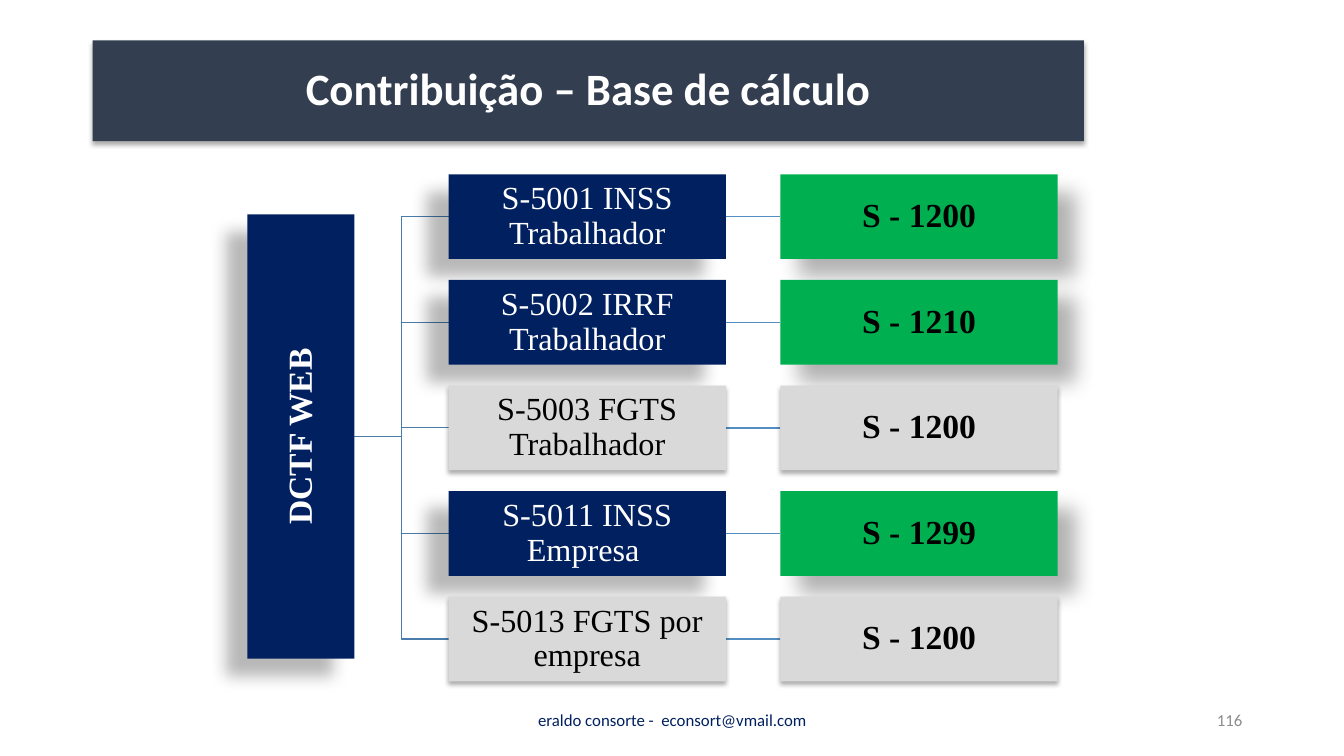
from lxml import etree
from pptx import Presentation
from pptx.dml.color import RGBColor
from pptx.enum.shapes import MSO_CONNECTOR, MSO_SHAPE
from pptx.enum.text import MSO_ANCHOR, PP_ALIGN
from pptx.oxml.ns import qn
from pptx.util import Inches, Pt

RECT = MSO_SHAPE.RECTANGLE
STRAIGHT, ELBOW = MSO_CONNECTOR.STRAIGHT, MSO_CONNECTOR.ELBOW
CENTER, RIGHT = PP_ALIGN.CENTER, PP_ALIGN.RIGHT
MIDDLE = MSO_ANCHOR.MIDDLE

TITLE = "Contribuição – Base de cálculo"
ROOT = "DCTF WEB"
FOOTER = "eraldo consorte -  econsort@vmail.com"
PAGE_NUMBER = "116"

# totalizer event, source event, highlighted
EVENTS = [
    ("S-5001 INSS Trabalhador", "S - 1200", True),
    ("S-5002 IRRF Trabalhador", "S - 1210", True),
    ("S-5003 FGTS Trabalhador", "S - 1200", False),
    ("S-5011 INSS Empresa ", "S - 1299", True),
    ("S-5013 FGTS por empresa", "S - 1200", False),
]

SLATE, NAVY, GREEN, GRAY = "333F50", "002060", "00B050", "D9D9D9"
WHITE, BLACK, PAGE_GRAY = "FFFFFF", "000000", "8C8C8C"
BRANCH_BLUE, LINK_BLUE = "497CAB", "538DC1"
SANS, SERIF = "Calibri", "Times New Roman"

# opacity %, blur pt, distance pt, direction degrees
SOFT_SHADOW = (32, 3.5, 2.2, 90)
LEFT_SHADOW = (28, 11.8, 19.7, 141)
RIGHT_SHADOW = (30, 15, 18, 45)

BOX_W, BOX_H = 2.75, 0.84
TOTAL_X, SOURCE_X = 4.45, 7.74
FIRST_Y, ROW_STEP = 1.73, 1.0475
ROOT_LENGTH, ROOT_THICKNESS = 4.41, 1.06
ROOT_CENTER_X, ROOT_CENTER_Y = 2.985, 4.33
ROOT_RIGHT = 3.51
BOX_INSET = 0.02

prs = Presentation()
prs.slide_width, prs.slide_height = Inches(13.33), Inches(7.5)
slide = prs.slides.add_slide(prs.slide_layouts[6])


def color(hex_value):
    return RGBColor.from_string(hex_value)


def add_shadow(shape, opacity, blur, distance, direction):
    shape.shadow.inherit = False
    effects = shape.fill._xPr.find(qn("a:effectLst"))
    shadow = etree.SubElement(
        effects, qn("a:outerShdw"), blurRad=str(Pt(blur)), dist=str(Pt(distance)),
        dir=str(direction * 60000), algn="ctr", rotWithShape="0")
    black = etree.SubElement(shadow, qn("a:srgbClr"), val=BLACK)
    etree.SubElement(black, qn("a:alpha"), val=str(opacity * 1000))


def write(shape, text, size, font, text_color, bold=False, align=CENTER, inset=None):
    frame = shape.text_frame
    frame.word_wrap = True
    frame.vertical_anchor = MIDDLE
    if inset is not None:
        frame.margin_left = frame.margin_right = Inches(inset)
        frame.margin_top = frame.margin_bottom = Inches(inset)
    paragraph = frame.paragraphs[0]
    paragraph.alignment = align
    paragraph.line_spacing = 0.9
    run = paragraph.add_run()
    run.text = text
    run.font.size, run.font.name, run.font.bold = Pt(size), font, bold
    run.font.color.rgb = color(text_color)


def add_box(x, y, w, h, fill, shadow):
    box = slide.shapes.add_shape(RECT, Inches(x), Inches(y), Inches(w), Inches(h))
    box.fill.solid()
    box.fill.fore_color.rgb = color(fill)
    box.line.fill.background()
    add_shadow(box, *shadow)
    return box


def add_line(kind, x1, y1, x2, y2, line_color):
    line = slide.shapes.add_connector(
        kind, Inches(x1), Inches(y1), Inches(x2), Inches(y2))
    line.line.color.rgb = color(line_color)
    line.line.width = Pt(1)
    etree.SubElement(line._element.spPr, qn("a:effectLst"))


def add_label(x, w, text, text_color, align):
    label = slide.shapes.add_textbox(Inches(x), Inches(6.95), Inches(w), Inches(0.4))
    write(label, text, 12, SANS, text_color, align=align)


title = add_box(0.92, 0.4, 9.83, 1, SLATE, SOFT_SHADOW)
write(title, TITLE, 32, SANS, WHITE, bold=True)

row_tops = [FIRST_Y + i * ROW_STEP for i in range(len(EVENTS))]
for top in row_tops:
    middle = top + BOX_H / 2
    add_line(ELBOW, ROOT_RIGHT, ROOT_CENTER_Y, TOTAL_X, middle, BRANCH_BLUE)
    add_line(STRAIGHT, TOTAL_X + BOX_W, middle, SOURCE_X, middle, LINK_BLUE)

root = add_box(ROOT_CENTER_X - ROOT_LENGTH / 2, ROOT_CENTER_Y - ROOT_THICKNESS / 2,
               ROOT_LENGTH, ROOT_THICKNESS, NAVY, LEFT_SHADOW)
root.rotation = 270
write(root, ROOT, 24, SERIF, WHITE, bold=True, inset=BOX_INSET)

for top, (total_event, source_event, highlighted) in zip(row_tops, EVENTS):
    if highlighted:
        total_style, source_style = (NAVY, LEFT_SHADOW), (GREEN, RIGHT_SHADOW)
    else:
        total_style = source_style = (GRAY, SOFT_SHADOW)
    total = add_box(TOTAL_X, top, BOX_W, BOX_H, *total_style)
    write(total, total_event, 23, SERIF, WHITE if highlighted else BLACK,
          inset=BOX_INSET)
    source = add_box(SOURCE_X, top, BOX_W, BOX_H, *source_style)
    write(source, source_event, 24, SERIF, BLACK, bold=True, inset=BOX_INSET)

add_label(4.42, 4.5, FOOTER, NAVY, CENTER)
add_label(9.42, 3, PAGE_NUMBER, PAGE_GRAY, RIGHT)

prs.save("out.pptx")
